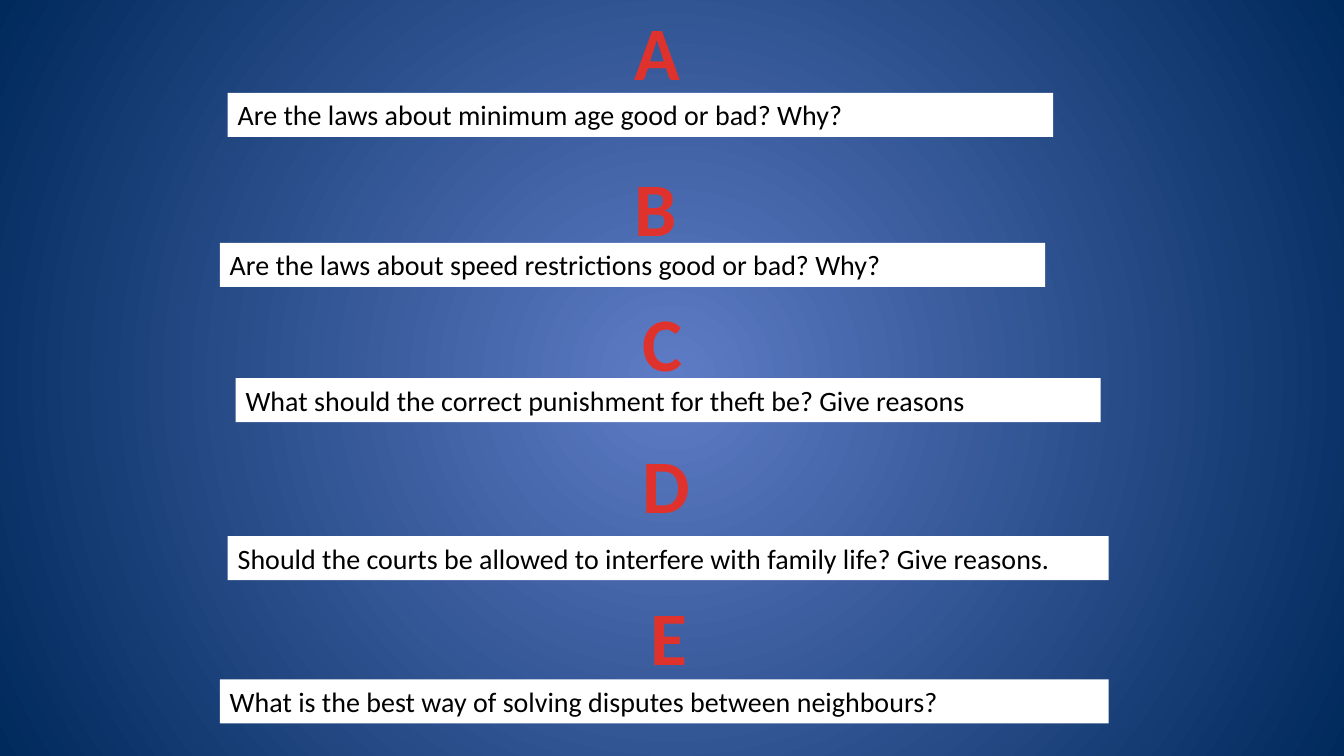
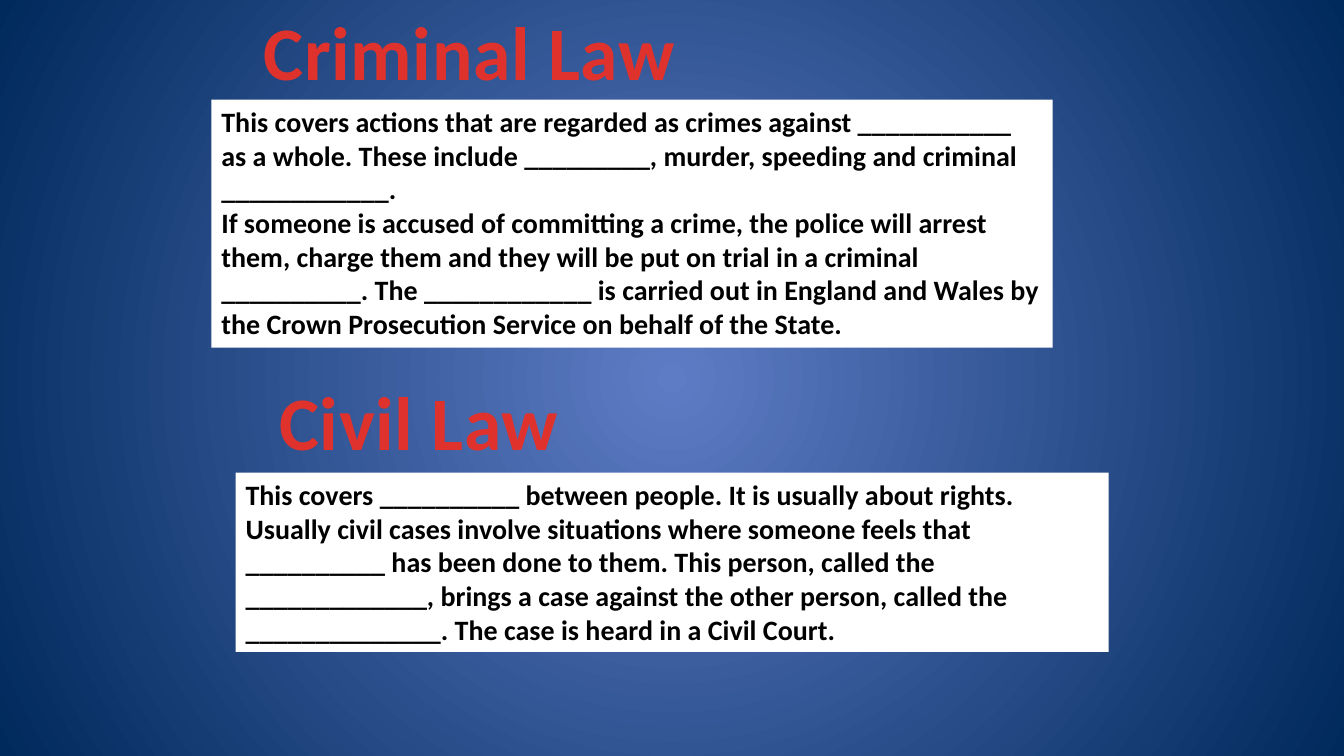
from dataclasses import dataclass

from lxml import etree
from pptx import Presentation
from pptx import util as u
from pptx.dml.color import RGBColor
from pptx.enum import shapes, text
from pptx.oxml.ns import qn


@dataclass(frozen=True)
class Theme:
    font: str = "Calibri"
    heading_size: int = 54
    body_size: int = 20
    heading: RGBColor = RGBColor(0xE0, 0x32, 0x2D)
    ink: RGBColor = RGBColor(0, 0, 0)
    card: RGBColor = RGBColor(0xFF, 0xFF, 0xFF)
    glow: RGBColor = RGBColor(0x5E, 0x7C, 0xC5)
    edge: RGBColor = RGBColor(0x00, 0x29, 0x5C)


T = Theme()
HEADING_H = 2.57
QUESTION_H = 1.11

# Heading: letter, left, top, width; card: left, top, width, text (cm)
QUESTIONS = [
    (("A", 15.72, 0, 1.7),
     (5.74, 2.34, 20.8, "Are the laws about minimum age good or bad? Why?")),
    (("B", 15.72, 3.94, 1.6),
     (5.54, 6.12, 20.8, "Are the laws about speed restrictions good or bad? Why?")),
    (("C", 15.93, 7.32, 1.55),
     (5.94, 9.53, 21.8, "What should the correct punishment for theft be? Give reasons")),
    (("D", 15.93, 10.92, 1.75),
     (5.74, 13.51, 22.2,
      "Should the courts be allowed to interfere with family life? Give reasons.")),
    (("E", 16.13, 14.73, 1.47),
     (5.54, 17.12, 22.4, "What is the best way of solving disputes between neighbours?")),
]

CRIMINAL = [
    "This covers actions that are regarded as crimes against ___________ as a whole. "
    "These include _________, murder, speeding and criminal ____________.",
    "If someone is accused of committing a crime, the police will arrest them, charge them "
    "and they will be put on trial in a criminal __________. The ____________ is carried out "
    "in England and Wales by the Crown Prosecution Service on behalf of the State.",
]
CIVIL = [
    "This covers __________ between people. It is usually about rights. Usually civil cases "
    "involve situations where someone feels that __________ has been done to them. This person, "
    "called the _____________, brings a case against the other person, called the "
    "______________. The case is heard in a Civil Court.",
]


def set_background(master):
    """Radial glow, shared by all slides."""
    fill = master.background.fill
    fill.gradient()
    for stop, color in zip(fill.gradient_stops, (T.glow, T.edge)):
        stop.color.rgb = color
    grad = master.element.find(".//" + qn("a:gradFill"))
    lin = grad.find(qn("a:lin"))
    radial = etree.Element(qn("a:path"), {"path": "circle"})
    etree.SubElement(radial, qn("a:fillToRect"), dict.fromkeys("ltrb", "50000"))
    grad.replace(lin, radial)


def write(tf, lines, size, color, bold, align):
    tf.text = "\n".join(lines)
    for p in tf.paragraphs:
        p.alignment = align
        for r in p.runs:
            r.font.name = T.font
            r.font.size = u.Pt(size)
            r.font.bold = bold
            r.font.color.rgb = color


def add_heading(s, label, left, top, width):
    sp = s.shapes.add_textbox(u.Cm(left), u.Cm(top), u.Cm(width), u.Cm(HEADING_H))
    tf = sp.text_frame
    tf.word_wrap = False
    write(tf, [label], T.heading_size, T.heading, True, text.PP_ALIGN.CENTER)
    # Slightly open letter spacing
    tf.paragraphs[0].runs[0].font._element.set("spc", "50")


def add_card(s, left, top, width, height, lines, bold=False):
    sp = s.shapes.add_shape(shapes.MSO_SHAPE.RECTANGLE,
                            u.Cm(left), u.Cm(top), u.Cm(width), u.Cm(height))
    sp.shadow.inherit = False
    sp.fill.solid()
    sp.fill.fore_color.rgb = T.card
    sp.line.fill.background()
    tf = sp.text_frame
    tf.word_wrap = True
    tf.vertical_anchor = text.MSO_ANCHOR.TOP
    write(tf, lines, T.body_size, T.ink, bold, text.PP_ALIGN.LEFT)


def main():
    prs = Presentation()
    prs.slide_width, prs.slide_height = u.Cm(33.87), u.Cm(19.05)
    set_background(prs.slide_master)
    blank = prs.slide_layouts[6]

    # Discussion questions
    s = prs.slides.add_slide(blank)
    for heading, (left, top, width, question) in QUESTIONS:
        add_heading(s, *heading)
        add_card(s, left, top, width, QUESTION_H, [question])

    # Fill in the gaps
    s = prs.slides.add_slide(blank)
    add_heading(s, "Criminal Law", 6.32, 0, 11.02)
    add_card(s, 5.33, 2.51, 21.2, 6.25, CRIMINAL, bold=True)
    add_heading(s, "Civil Law", 6.73, 9.32, 7.65)
    add_card(s, 5.94, 11.91, 22, 4.52, CIVIL, bold=True)

    prs.save("out.pptx")


if __name__ == "__main__":
    main()
